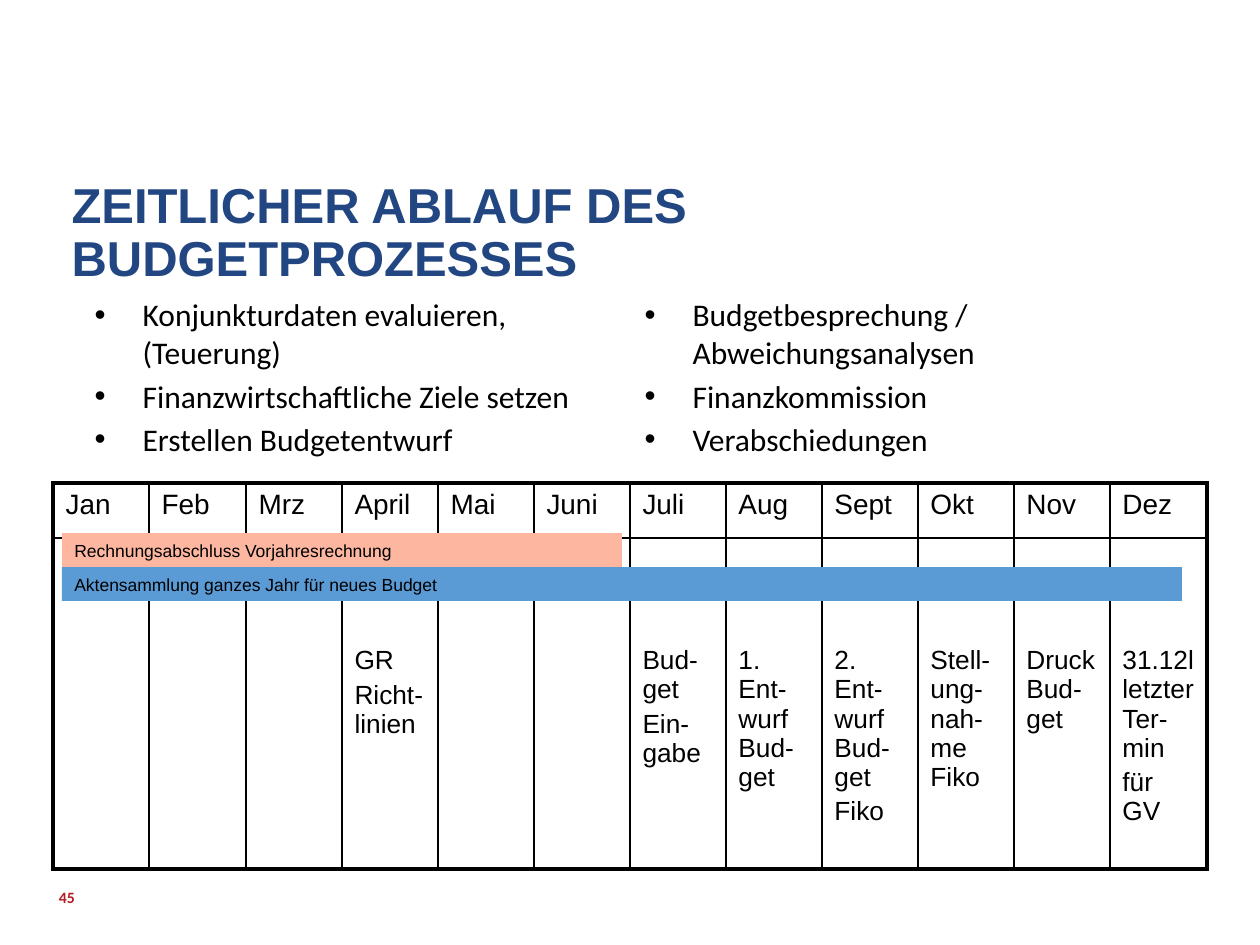
from dataclasses import dataclass

from lxml.etree import SubElement
from pptx import Presentation
from pptx.dml.color import RGBColor
from pptx.enum.shapes import MSO_SHAPE as Shape
from pptx.enum.text import MSO_ANCHOR as Anchor, MSO_AUTO_SIZE as AutoSize, PP_ALIGN as Align
from pptx.oxml.ns import qn
from pptx.util import Emu, Pt

PX_PER_INCH = 126
TWO_CONTENT_LAYOUT = 3


def px(length):
    return Emu(round(length * 914400 / PX_PER_INCH))


@dataclass(frozen=True)
class Theme:
    heading_font: str = "Arial"
    body_font: str = "Calibri"
    title: str = "224681"
    text: str = "000000"
    number: str = "B21D24"
    paper: str = "FFFFFF"
    closing_bar: str = "FDB7A1"
    filing_bar: str = "5B9BD5"
    title_size: int = 28
    list_size: int = 18
    month_size: int = 16
    step_size: int = 15
    bar_size: int = 10
    number_size: int = 9
    thin: float = 1
    thick: float = 2.25


def add_bullet(paragraph, indent):
    properties = paragraph._p.get_or_add_pPr()
    properties.set("marL", str(px(indent)))
    properties.set("indent", str(-px(indent)))
    SubElement(properties, qn("a:buFont"), typeface="Arial")
    SubElement(properties, qn("a:buChar"), char="•")


def write_text(frame, lines, *, font, size, color, bold=False, gap=0,
               line_spacing=None, anchor=Anchor.TOP, bullet_indent=None):
    frame.word_wrap = True
    frame.vertical_anchor = anchor
    for index, line in enumerate(lines):
        paragraph = frame.add_paragraph() if index else frame.paragraphs[0]
        if bullet_indent:
            add_bullet(paragraph, bullet_indent)
        paragraph.alignment = Align.LEFT
        paragraph.space_before = Pt(gap if index else 0)
        if line_spacing:
            paragraph.line_spacing = line_spacing
        run = paragraph.add_run()
        run.text = line
        run.font.name = font
        run.font.size = Pt(size)
        run.font.bold = bold
        run.font.color.rgb = RGBColor.from_string(color)


def set_border(cell, side, width, color):
    line = SubElement(cell._tc.get_or_add_tcPr(), qn(f"a:ln{side}"), w=str(Pt(width)))
    fill = SubElement(line, qn("a:solidFill"))
    SubElement(fill, qn("a:srgbClr"), val=color)


class SlideBuilder:
    def __init__(self, slide, theme):
        self.slide = slide
        self.theme = theme

    def place(self, shape, left, top, width, height):
        shape.left, shape.top = px(left), px(top)
        shape.width, shape.height = px(width), px(height)

    def title(self, text, *box):
        shape = self.slide.shapes.title
        self.place(shape, *box)
        shape.text_frame.auto_size = AutoSize.NONE
        write_text(shape.text_frame, [text], font=self.theme.heading_font,
                   size=self.theme.title_size, color=self.theme.title, bold=True,
                   line_spacing=0.9, anchor=Anchor.BOTTOM)

    def bullets(self, placeholder_index, items, *box):
        shape = self.slide.placeholders[placeholder_index]
        self.place(shape, *box)
        shape.text_frame.auto_size = AutoSize.NONE
        write_text(shape.text_frame, items, font=self.theme.body_font,
                   size=self.theme.list_size, color=self.theme.text,
                   gap=3.2, bullet_indent=48)

    def page_number(self, text, *box):
        frame = self.slide.shapes.add_textbox(*map(px, box)).text_frame
        frame.margin_left = frame.margin_right = frame.margin_top = frame.margin_bottom = 0
        write_text(frame, [text], font=self.theme.body_font, size=self.theme.number_size,
                   color=self.theme.number, bold=True, anchor=Anchor.MIDDLE)

    def bar(self, text, color, *box):
        shape = self.slide.shapes.add_shape(Shape.RECTANGLE, *map(px, box))
        shape.shadow.inherit = False
        shape.fill.solid()
        shape.fill.fore_color.rgb = RGBColor.from_string(color)
        shape.line.fill.background()
        write_text(shape.text_frame, [text], font=self.theme.heading_font,
                   size=self.theme.bar_size, color=self.theme.text, anchor=Anchor.MIDDLE)

    def calendar(self, months, left, top, column_widths, row_heights, step_offset, first_filled):
        theme = self.theme
        table = self.slide.shapes.add_table(
            len(row_heights), len(months), px(left), px(top),
            px(sum(column_widths)), px(sum(row_heights))).table
        table.first_row = table.horz_banding = False
        for row, height in zip(table.rows, row_heights):
            row.height = px(height)
        last = len(months) - 1
        for column, (month, steps) in enumerate(months):
            table.columns[column].width = px(column_widths[column])
            header, body = table.cell(0, column), table.cell(1, column)
            write_text(header.text_frame, [month], font=theme.heading_font,
                       size=theme.month_size, color=theme.text)
            if steps:
                body.margin_top = px(step_offset)
                write_text(body.text_frame, steps, font=theme.heading_font,
                           size=theme.step_size, color=theme.text, gap=3)
            for cell in (header, body):
                outer = {"L": column == 0, "R": column == last,
                         "T": cell is header, "B": cell is body}
                for side, is_outer in outer.items():
                    set_border(cell, side, theme.thick if is_outer else theme.thin, theme.text)
                if column < first_filled:
                    cell.fill.background()
                else:
                    cell.fill.solid()
                    cell.fill.fore_color.rgb = RGBColor.from_string(theme.paper)


MONTHS = [
    ("Jan", []), ("Feb", []), ("Mrz", []),
    ("April", ["GR", "Richt-linien"]),
    ("Mai", []), ("Juni", []),
    ("Juli", ["Bud-get", "Ein-gabe"]),
    ("Aug", ["1. Ent-wurf Bud-get"]),
    ("Sept", ["2. Ent-wurf Bud-get", "Fiko"]),
    ("Okt", ["Stell-ung-nah-me Fiko"]),
    ("Nov", ["Druck Bud-get"]),
    ("Dez", ["31.12lletzterTer-min", "für GV"]),
]
PREPARATION = ["Konjunkturdaten evaluieren, (Teuerung)",
               "Finanzwirtschaftliche Ziele setzen", "Erstellen Budgetentwurf"]
APPROVAL = ["Budgetbesprechung / Abweichungsanalysen",
            "Finanzkommission", "Verabschiedungen"]


def main():
    presentation = Presentation()
    presentation.slide_width, presentation.slide_height = px(1260), px(945)
    slide = presentation.slides.add_slide(presentation.slide_layouts[TWO_CONTENT_LAYOUT])
    theme = Theme()
    builder = SlideBuilder(slide, theme)

    builder.title("ZEITLICHER ABLAUF DES BUDGETPROZESSES", 59, 175, 1155, 118)
    builder.bullets(1, PREPARATION, 82, 289, 562, 184)
    builder.bullets(2, APPROVAL, 632, 289, 562, 184)
    builder.calendar(MONTHS, left=53, top=483, column_widths=[96, 97] + [96] * 9 + [97],
                     row_heights=[55, 331], step_offset=108, first_filled=8)
    builder.bar("Aktensammlung ganzes Jahr für neues Budget", theme.filing_bar,
                62, 567, 1120, 34)
    builder.bar("Rechnungsabschluss Vorjahresrechnung", theme.closing_bar,
                62, 533, 560, 34)
    builder.page_number("45", 59, 872, 284, 50)

    presentation.save("out.pptx")


if __name__ == "__main__":
    main()
